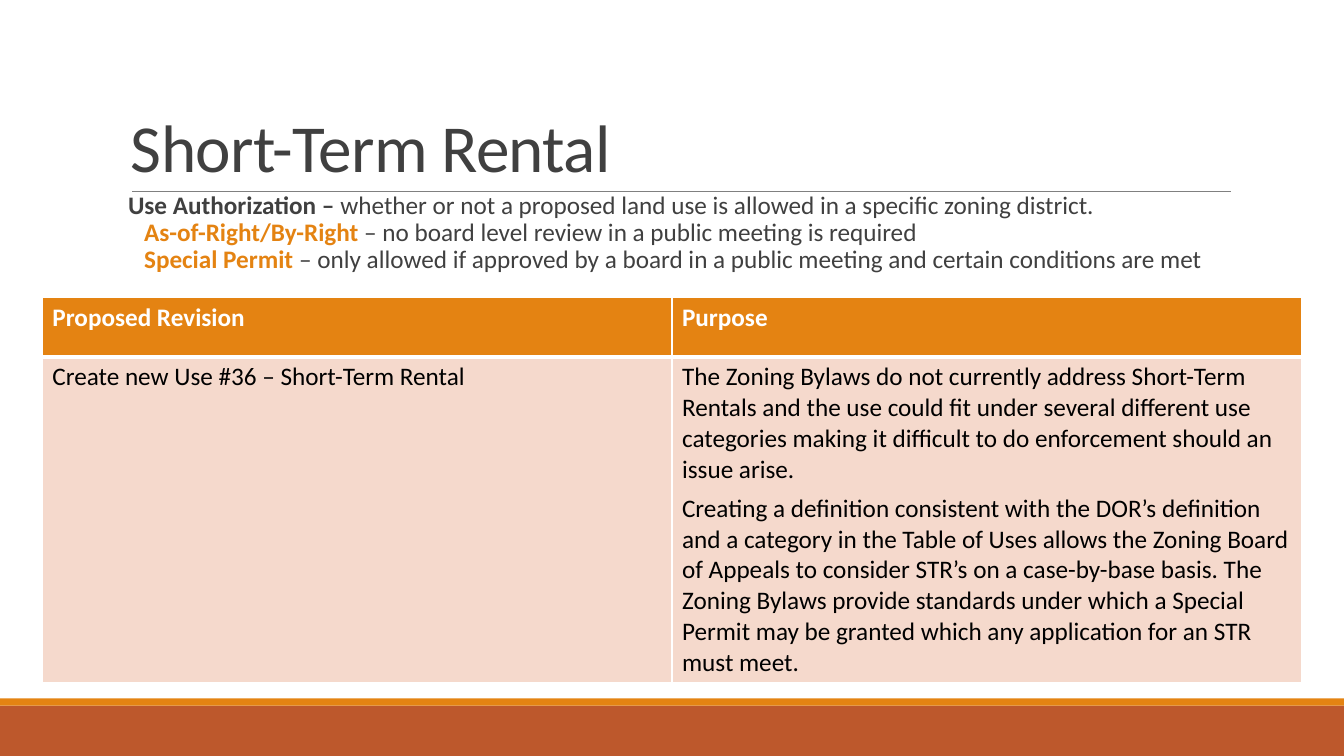
from lxml import etree
from pptx import Presentation
from pptx.dml.color import RGBColor
from pptx.enum.shapes import MSO_CONNECTOR, MSO_SHAPE
from pptx.enum.text import MSO_ANCHOR
from pptx.oxml.ns import qn
from pptx.util import Inches, Pt

FONT = "Calibri"
ORANGE = RGBColor(0xE4, 0x83, 0x12)
RUST = RGBColor(0xBD, 0x58, 0x2C)
PEACH = RGBColor(0xF5, 0xD9, 0xCC)
DARK = RGBColor(0x40, 0x40, 0x40)
GREY = RGBColor(0x80, 0x80, 0x80)
WHITE = RGBColor(0xFF, 0xFF, 0xFF)
BLACK = RGBColor(0, 0, 0)

WIDTH, HEIGHT = 13.33, 7.5
LEFT, CONTENT_WIDTH = 1.2, 11

# term, its colour, explanation, left indent in inches
DEFINITIONS = [
    ("Use Authorization – ", DARK,
     "whether or not a proposed land use is allowed in a specific zoning district.", 0.07),
    ("As-of-Right/By-Right ", ORANGE,
     "– no board level review in a public meeting is required", 0.23),
    ("Special Permit ", ORANGE,
     "– only allowed if approved by a board in a public meeting and certain conditions are met", 0.23),
]
HEADERS = ["Proposed Revision", "Purpose"]
REVISION = ["Create new Use #36 – Short-Term Rental"]
PURPOSE = [
    "The Zoning Bylaws do not currently address Short-Term Rentals and the use could fit "
    "under several different use categories making it difficult to do enforcement should "
    "an issue arise.",
    "Creating a definition consistent with the DOR’s definition and a category in the Table "
    "of Uses allows the Zoning Board of Appeals to consider STR’s on a case-by-base basis. "
    "The Zoning Bylaws provide standards under which a Special Permit may be granted which "
    "any application for an STR must meet.",
]


def inches(*lengths):
    return [Inches(n) for n in lengths]


def set_font(font, size, color, bold=False):
    font.name, font.size, font.bold = FONT, Pt(size), bold
    font.color.rgb = color


def add_footer(s, top, band, stripe):
    """Draw the bottom band with a thin stripe on top of it."""
    for y, h, color in [(top + stripe, band, RUST), (top, stripe, ORANGE)]:
        bar = s.shapes.add_shape(MSO_SHAPE.RECTANGLE, *inches(0, y, WIDTH, h))
        bar.shadow.inherit = False
        bar.fill.solid()
        bar.fill.fore_color.rgb = color
        bar.line.fill.background()


def add_title(s, text, x, y, w, h):
    """Place the title above its rule."""
    tf = s.shapes.add_textbox(*inches(x, y, w, h)).text_frame
    tf.word_wrap = True
    tf.vertical_anchor = MSO_ANCHOR.BOTTOM
    p = tf.paragraphs[0]
    p.line_spacing = 0.85
    r = p.add_run()
    r.text = text
    set_font(r.font, 48, DARK)
    r.font._element.set("spc", "-50")

    bottom = y + h
    rule = s.shapes.add_connector(
        MSO_CONNECTOR.STRAIGHT, *inches(x + 0.11, bottom, x + w + 0.01, bottom))
    rule.line.color.rgb = GREY
    rule.line.width = Pt(0.5)
    etree.SubElement(rule._element.spPr, qn("a:effectLst"))


def add_definitions(s, x, y, w, h):
    tf = s.shapes.add_textbox(*inches(x, y, w, h)).text_frame
    tf.word_wrap = True
    tf.margin_left = tf.margin_right = 0
    for i, (term, color, meaning, indent) in enumerate(DEFINITIONS):
        p = tf.add_paragraph() if i else tf.paragraphs[0]
        p.line_spacing = 0.9
        p._p.get_or_add_pPr().set("marL", str(Inches(indent)))
        for text, c, bold in [(term, color, True), (meaning, DARK, False)]:
            r = p.add_run()
            r.text = text
            set_font(r.font, 18, c, bold)


def set_borders(cell, bottom):
    """Draw white borders, 1 pt except for the bottom one."""
    tcPr = cell._tc.get_or_add_tcPr()
    for i, (tag, width) in enumerate([("lnL", 1), ("lnR", 1), ("lnT", 1), ("lnB", bottom)]):
        ln = etree.Element(qn(f"a:{tag}"), w=str(Pt(width)))
        fill = etree.SubElement(ln, qn("a:solidFill"))
        etree.SubElement(fill, qn("a:srgbClr"), val=str(WHITE))
        tcPr.insert(i, ln)


def fill_cell(cell, texts, fill, color, bold, bottom):
    cell.fill.solid()
    cell.fill.fore_color.rgb = fill
    set_borders(cell, bottom)
    tf = cell.text_frame
    tf.text = "\n".join(texts)
    for p in tf.paragraphs:
        set_font(p.font, 18, color, bold)
    for p in tf.paragraphs[:-1]:
        p.space_after = Pt(6)


def add_revisions(s, x, y, w, h, header):
    """Place the two-column table of revisions."""
    table = s.shapes.add_table(2, 2, *inches(x, y, w, h)).table
    table.rows[0].height, table.rows[1].height = inches(header, h - header)
    for col, (head, texts) in enumerate(zip(HEADERS, [REVISION, PURPOSE])):
        fill_cell(table.cell(0, col), [head], ORANGE, WHITE, True, 3)
        fill_cell(table.cell(1, col), texts, PEACH, BLACK, False, 1)


def main():
    prs = Presentation()
    prs.slide_width, prs.slide_height = inches(WIDTH, HEIGHT)
    s = prs.slides.add_slide(prs.slide_layouts[6])
    add_footer(s, 6.93, 0.5, 0.07)
    add_title(s, "Short-Term Rental", LEFT, 0.31, CONTENT_WIDTH, 1.59)
    add_definitions(s, LEFT, 1.86, CONTENT_WIDTH, 1.08)
    add_revisions(s, 0.42, 2.95, 12.49, 3.82, 0.59)
    prs.save("out.pptx")


if __name__ == "__main__":
    main()
